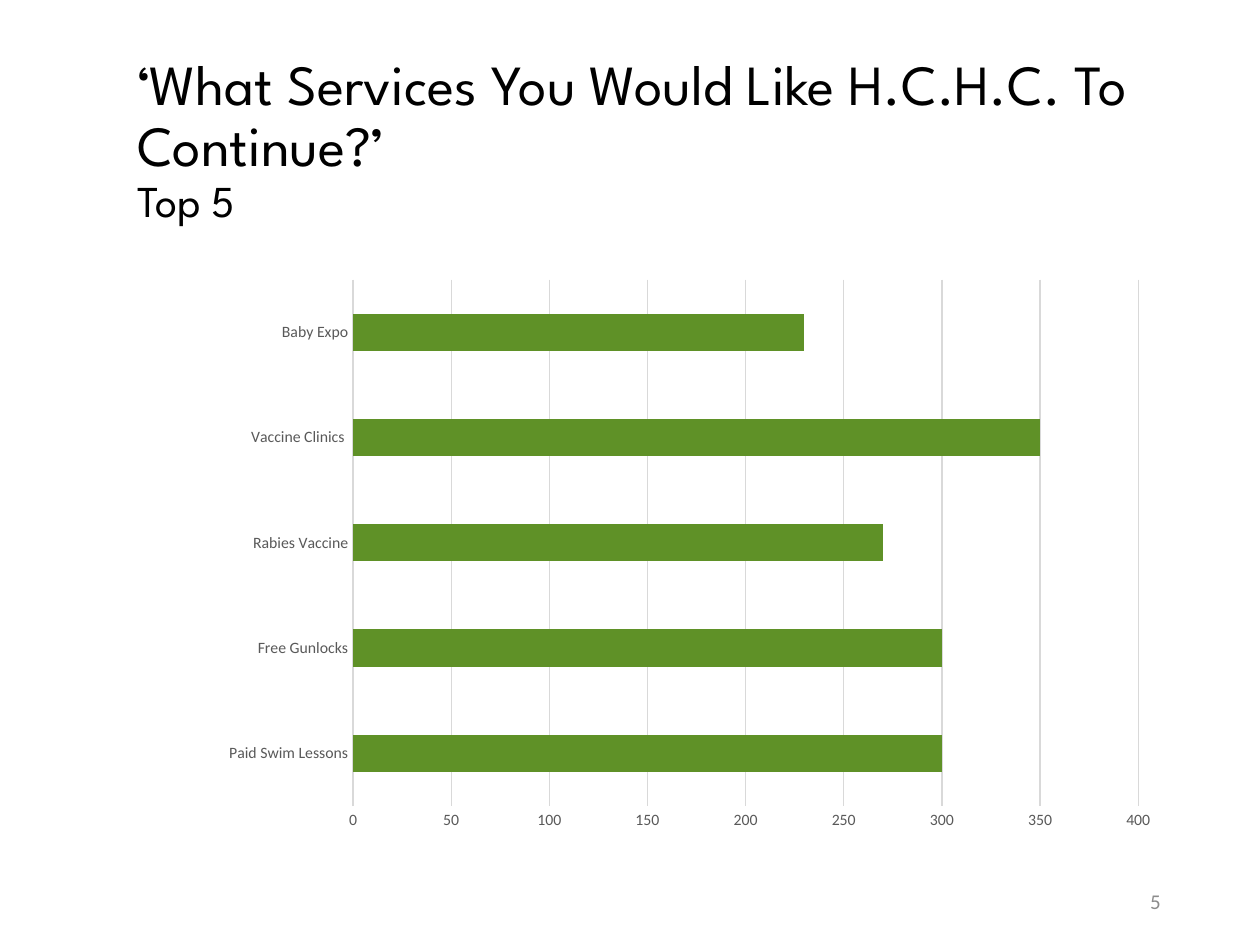
from dataclasses import dataclass

from lxml import etree
from pptx import Presentation
from pptx.chart.data import CategoryChartData
from pptx.dml.color import RGBColor
from pptx.enum.chart import XL_CHART_TYPE as ChartType, XL_TICK_MARK as Tick
from pptx.enum.text import MSO_ANCHOR as Anchor, PP_ALIGN as Align
from pptx.oxml.ns import qn
from pptx.util import Inches, Pt


@dataclass
class Box:
    left: float
    top: float
    width: float
    height: float

    def lengths(self) -> list:
        return [Inches(v) for v in (self.left, self.top, self.width, self.height)]


@dataclass
class Service:
    name: str
    votes: int


# Listed from the bottom bar upwards
SERVICES = [
    Service("Paid Swim Lessons", 300),
    Service("Free Gunlocks", 300),
    Service("Rabies Vaccine", 270),
    Service("Vaccine Clinics ", 350),
    Service("Baby Expo", 230),
]
PLOT_AREA = {"x": 0.245, "y": 0.046, "w": 0.723, "h": 0.878}


def rgb(color: str) -> RGBColor:
    return RGBColor.from_string(color)


def set_font(font, name: str, size: float, color: str) -> None:
    font.name = name
    font.size = Pt(size)
    font.color.rgb = rgb(color)


def add_text(s, box: Box, lines: list, font: str, color: str,
             align=Align.LEFT, spacing: float = 1.0) -> None:
    """Write (text, size) lines into one paragraph, split by line breaks."""
    tf = s.shapes.add_textbox(*box.lengths()).text_frame
    tf.word_wrap = True
    tf.vertical_anchor = Anchor.MIDDLE
    p = tf.paragraphs[0]
    p.alignment = align
    p.line_spacing = spacing
    for i, (text, size) in enumerate(lines):
        if i:
            p.add_line_break()
        r = p.add_run()
        r.text = text
        set_font(r.font, font, size, color)


def set_plot_layout(chart, fractions: dict) -> None:
    """Fix the inner plot area as fractions of the chart."""
    plot_area = chart._chartSpace.chart.plotArea
    for old in plot_area.findall(qn("c:layout")):
        plot_area.remove(old)
    layout = etree.Element(qn("c:layout"))
    manual = etree.SubElement(layout, qn("c:manualLayout"))
    settings = {"layoutTarget": "inner", "xMode": "edge", "yMode": "edge", **fractions}
    for tag, value in settings.items():
        etree.SubElement(manual, qn(f"c:{tag}")).set("val", str(value))
    plot_area.insert(0, layout)


def style_line(line, color: str) -> None:
    line.color.rgb = rgb(color)
    line.width = Pt(0.75)


def add_services_chart(s, box: Box, services: list) -> None:
    data = CategoryChartData()
    data.categories = [service.name for service in services]
    data.add_series("Series 1", [service.votes for service in services])
    chart = s.shapes.add_chart(ChartType.BAR_CLUSTERED, *box.lengths(), data).chart
    chart.has_legend = False
    chart.has_title = False
    set_font(chart.font, "Calibri", 10, "000000")
    set_plot_layout(chart, PLOT_AREA)

    # Bars
    plot = chart.plots[0]
    plot.gap_width = 182
    plot.vary_by_categories = False
    fill = plot.series[0].format.fill
    fill.solid()
    fill.fore_color.rgb = rgb("5F9127")

    # Axes and gridlines
    cat_axis, val_axis = chart.category_axis, chart.value_axis
    for axis in (cat_axis, val_axis):
        axis.major_tick_mark = axis.minor_tick_mark = Tick.NONE
        set_font(axis.tick_labels.font, "Calibri", 9, "595959")
    style_line(cat_axis.format.line, "D9D9D9")
    val_axis.format.line.fill.background()
    val_axis.minimum_scale, val_axis.maximum_scale = 0, 400
    val_axis.major_unit = 50
    val_axis.has_major_gridlines = True
    style_line(val_axis.major_gridlines.format.line, "D9D9D9")


def main() -> None:
    prs = Presentation()
    prs.slide_width, prs.slide_height = Inches(10), Inches(7.5)
    s = prs.slides.add_slide(prs.slide_layouts[6])

    # Title
    title = [("‘What Services You Would Like H.C.H.C. To Continue?’ ", 32.4),
             ("Top 5", 25.2)]
    add_text(s, Box(0.99, 0.4, 8.62, 1.45), title, "League Spartan", "000000",
             spacing=0.9)

    # Chart
    add_services_chart(s, Box(0.69, 2, 8.62, 4.76), SERVICES)

    # Slide number
    add_text(s, Box(7.06, 6.95, 2.25, 0.4), [("5", 12)], "Calibri", "8C8C8C",
             align=Align.RIGHT)

    prs.save("out.pptx")


if __name__ == "__main__":
    main()
